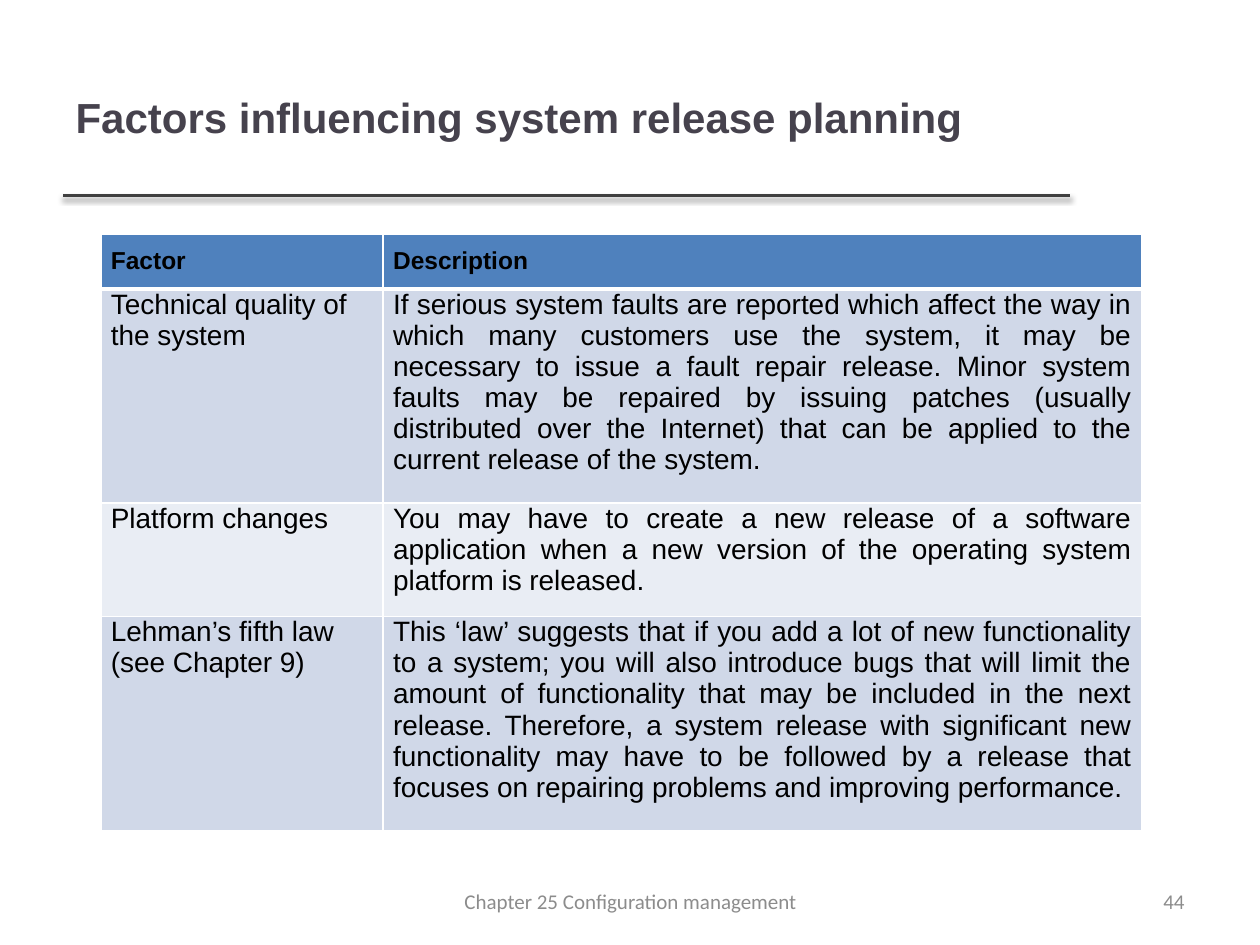
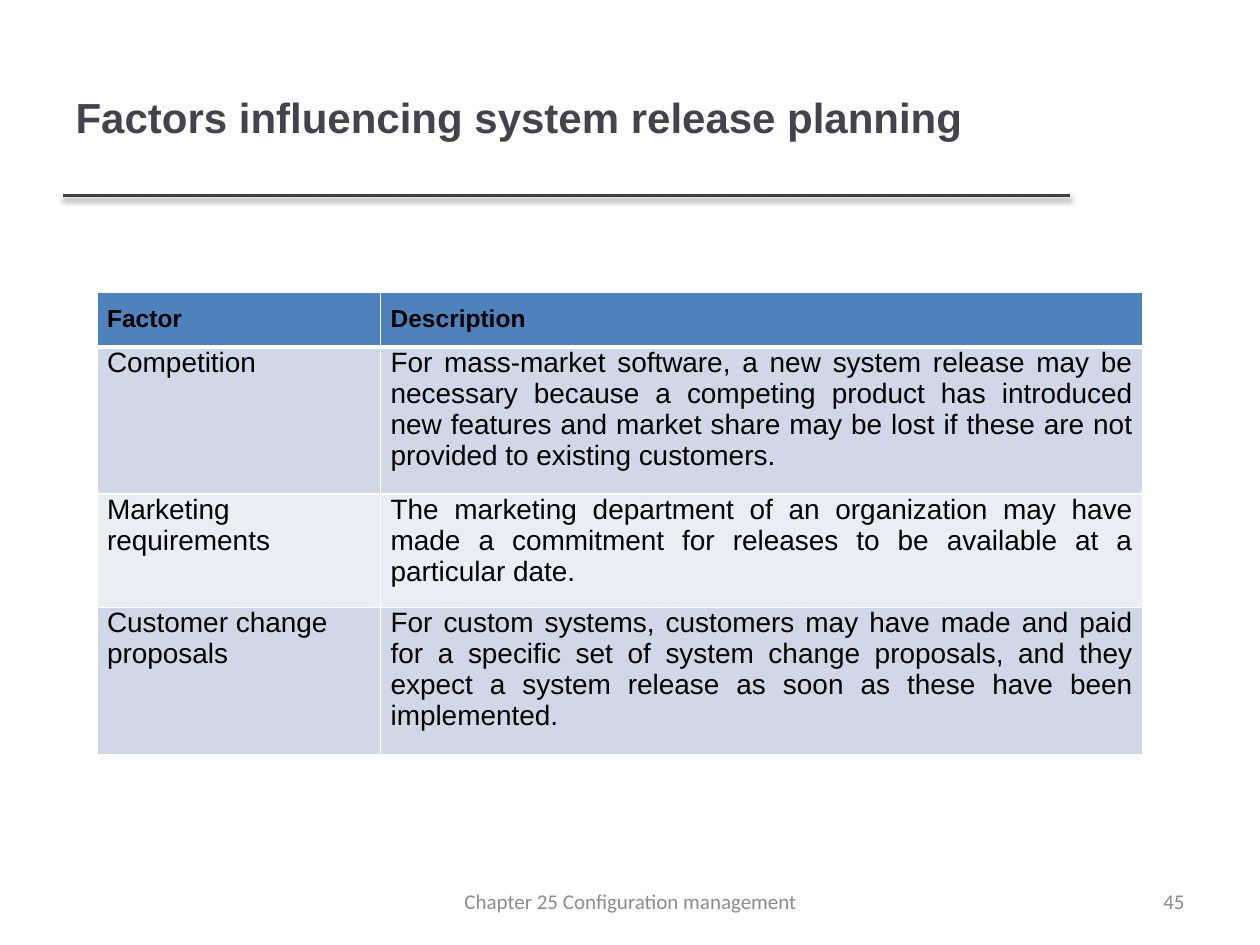
from lxml import etree
from pptx import Presentation
from pptx.dml.color import RGBColor
from pptx.enum.shapes import MSO_CONNECTOR
from pptx.enum.text import MSO_ANCHOR, PP_ALIGN
from pptx.oxml.ns import qn
from pptx.util import Pt

LEFT, CENTER, RIGHT = PP_ALIGN.LEFT, PP_ALIGN.CENTER, PP_ALIGN.RIGHT
JUSTIFY = PP_ALIGN.JUSTIFY
TOP, MIDDLE = MSO_ANCHOR.TOP, MSO_ANCHOR.MIDDLE
STRAIGHT = MSO_CONNECTOR.STRAIGHT

EMU_PER_PX = 9144  # 100 px to the inch
TITLE_ONLY = 5
HEADING_FONT, FOOTER_FONT = "Arial", "Calibri"
WHITE, BLACK = "FFFFFF", "000000"
TITLE_COLOR, RULE_COLOR, FOOTER_COLOR = "46424D", "404040", "8C8C8C"
HEADER_FILL, ROW_FILLS = "4F81BD", ("D0D8E8", "E9EDF4")
HEADER_HEIGHT, LINE_HEIGHT, CELL_PADDING = 41, 25, 10
SIDE_INSET = 8

TITLE = "Factors influencing system release planning"
FOOTER = "Chapter 25 Configuration management"
COLUMNS = ("Factor", "Description")

# Each factor: name, description, number of text lines it takes
PRODUCT_FACTORS = [
    ("Technical quality of the system",
     "If serious system faults are reported which affect the way in which many "
     "customers use the system, it may be necessary to issue a fault repair "
     "release. Minor system faults may be repaired by issuing patches (usually "
     "distributed over the Internet) that can be applied to the current release "
     "of the system.", 6),
    ("Platform changes",
     "You may have to create a new release of a software application when a new "
     "version of the operating system platform is released.", 3),
    ("Lehman’s fifth law (see Chapter 9)",
     "This ‘law’ suggests that if you add a lot of new functionality to a system; "
     "you will also introduce bugs that will limit the amount of functionality "
     "that may be included in the next release. Therefore, a system release with "
     "significant new functionality may have to be followed by a release that "
     "focuses on repairing problems and improving performance.", 6),
]
MARKET_FACTORS = [
    ("Competition",
     "For mass-market software, a new system release may be necessary because a "
     "competing product has introduced new features and market share may be lost "
     "if these are not provided to existing customers.", 4),
    ("Marketing requirements",
     "The marketing department of an organization may have made a commitment for "
     "releases to be available at a particular date.", 3),
    ("Customer change proposals",
     "For custom systems, customers may have made and paid for a specific set of "
     "system change proposals, and they expect a system release as soon as these "
     "have been implemented.", 4),
]


def px(length):
    return length * EMU_PER_PX


def rgb(hex_color):
    return RGBColor.from_string(hex_color)


def add_xml(parent, tag, **attributes):
    return etree.SubElement(parent, qn(tag), attributes)


class Deck:
    def __init__(self):
        self.presentation = Presentation()
        self.presentation.slide_width = px(1000)
        self.presentation.slide_height = px(750)
        self.slide = None

    def style(self, frame, font, size, color, bold=False, align=LEFT):
        for paragraph in frame.paragraphs:
            paragraph.alignment = align
            for run in paragraph.runs:
                run.font.name = font
                run.font.size = Pt(size)
                run.font.bold = bold
                run.font.color.rgb = rgb(color)

    def start_slide(self, title, footer, number):
        layout = self.presentation.slide_layouts[TITLE_ONLY]
        self.slide = self.presentation.slides.add_slide(layout)
        self.title(title)
        self.rule(50, 155, 849)
        self.footer_text(str(number), 717, 233, RIGHT)
        self.footer_text(footer, 342, 317, CENTER)

    def title(self, text):
        heading = self.slide.shapes.title
        heading.left, heading.top = px(50), px(30)
        heading.width, heading.height = px(798), px(125)
        frame = heading.text_frame
        frame.text = text
        frame.vertical_anchor = MIDDLE
        self.style(frame, HEADING_FONT, 24, TITLE_COLOR, bold=True)

    def rule(self, left, y, right):
        """Draw the horizontal line under the title, with a soft shadow."""
        line = self.slide.shapes.add_connector(
            STRAIGHT, px(left), px(y), px(right), px(y))
        line.line.color.rgb = rgb(RULE_COLOR)
        line.line.width = Pt(2)
        effects = add_xml(line._element.spPr, "a:effectLst")
        shadow = add_xml(effects, "a:outerShdw", blurRad="40000", dist="20000",
                         dir="5400000", rotWithShape="0")
        shade = add_xml(shadow, "a:srgbClr", val=BLACK)
        add_xml(shade, "a:alpha", val="38000")

    def footer_text(self, text, left, width, align):
        box = self.slide.shapes.add_textbox(px(left), px(695), px(width), px(40))
        frame = box.text_frame
        frame.word_wrap = True
        frame.vertical_anchor = MIDDLE
        frame.text = text
        self.style(frame, FOOTER_FONT, 12, FOOTER_COLOR, align=align)

    def factor_table(self, factors, left, top, widths):
        heights = [HEADER_HEIGHT]
        heights += [lines * LINE_HEIGHT + CELL_PADDING for _, _, lines in factors]
        table = self.slide.shapes.add_table(
            len(heights), len(widths), px(left), px(top),
            px(sum(widths)), px(sum(heights))).table
        for column, width in zip(table.columns, widths):
            column.width = px(width)
        for row, height in zip(table.rows, heights):
            row.height = px(height)

        for column, label in enumerate(COLUMNS):
            self.cell(table.cell(0, column), label, HEADER_FILL, JUSTIFY,
                      size=14, bold=True, top_inset=CELL_PADDING, bottom_line=3)
        for row, (factor, description, _) in enumerate(factors, start=1):
            fill = ROW_FILLS[(row - 1) % 2]
            top_line = 3 if row == 1 else 1
            self.cell(table.cell(row, 0), factor, fill, LEFT, top_line=top_line)
            self.cell(table.cell(row, 1), description, fill, JUSTIFY,
                      top_line=top_line)

    def cell(self, cell, text, fill, align, size=16, bold=False, top_inset=0,
             top_line=1, bottom_line=1):
        cell.text_frame.text = text
        cell.vertical_anchor = TOP
        cell.margin_left = cell.margin_right = px(SIDE_INSET)
        cell.margin_top, cell.margin_bottom = px(top_inset), px(CELL_PADDING)
        self.style(cell.text_frame, HEADING_FONT, size, BLACK, bold, align)
        properties = cell._tc.get_or_add_tcPr()
        borders = {"L": 1, "R": 1, "T": top_line, "B": bottom_line}
        for side, width in borders.items():
            border = add_xml(properties, f"a:ln{side}", w=str(Pt(width)))
            add_xml(add_xml(border, "a:solidFill"), "a:srgbClr", val=WHITE)
        cell.fill.solid()
        cell.fill.fore_color.rgb = rgb(fill)


def main():
    deck = Deck()
    deck.start_slide(TITLE, FOOTER, 44)
    deck.factor_table(PRODUCT_FACTORS, 80, 186, (224, 602))
    deck.start_slide(TITLE, FOOTER, 45)
    deck.factor_table(MARKET_FACTORS, 77, 232, (225, 605))
    deck.presentation.save("out.pptx")


if __name__ == "__main__":
    main()
